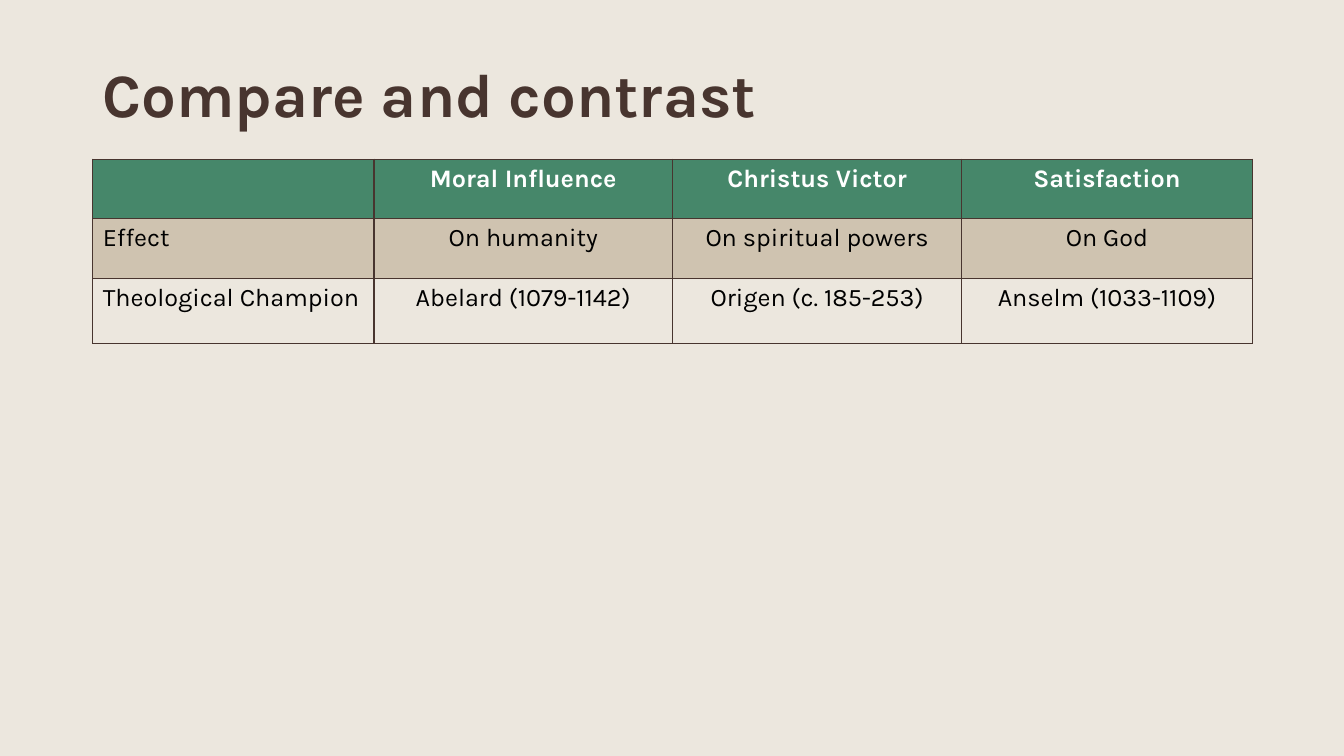
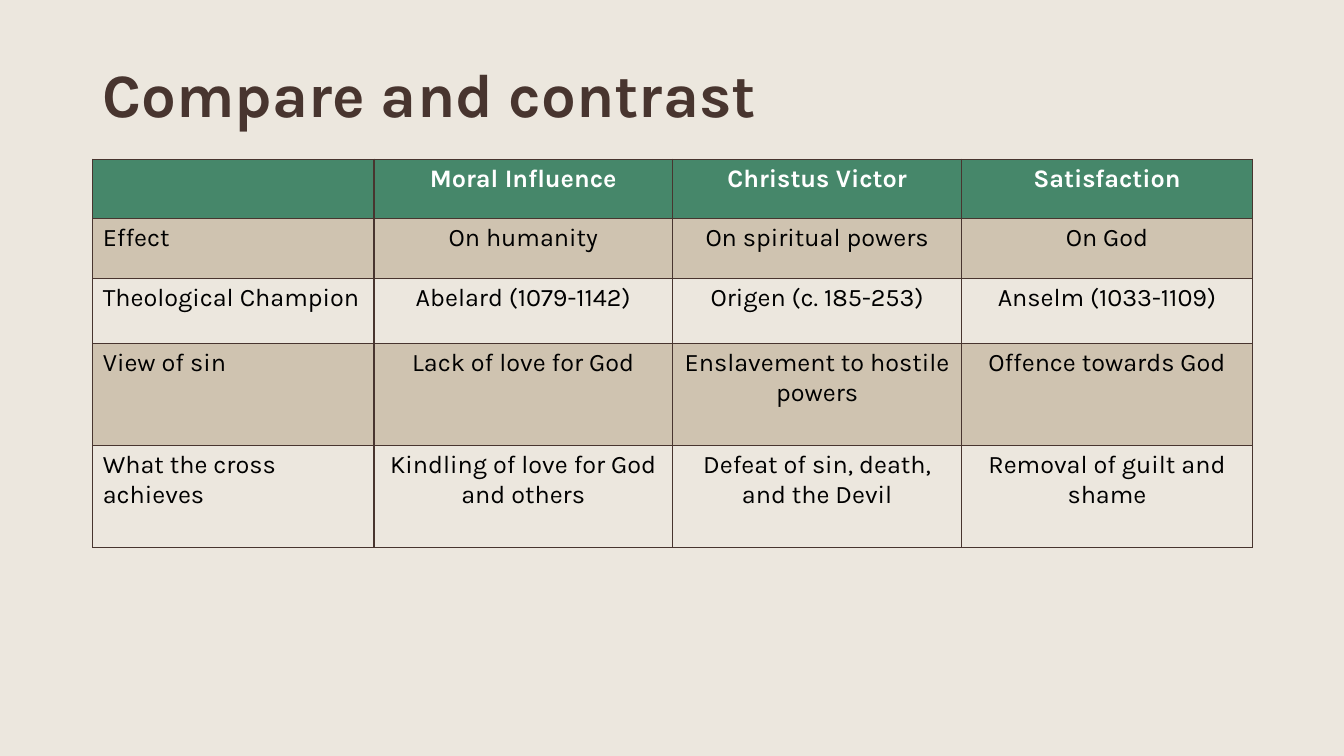
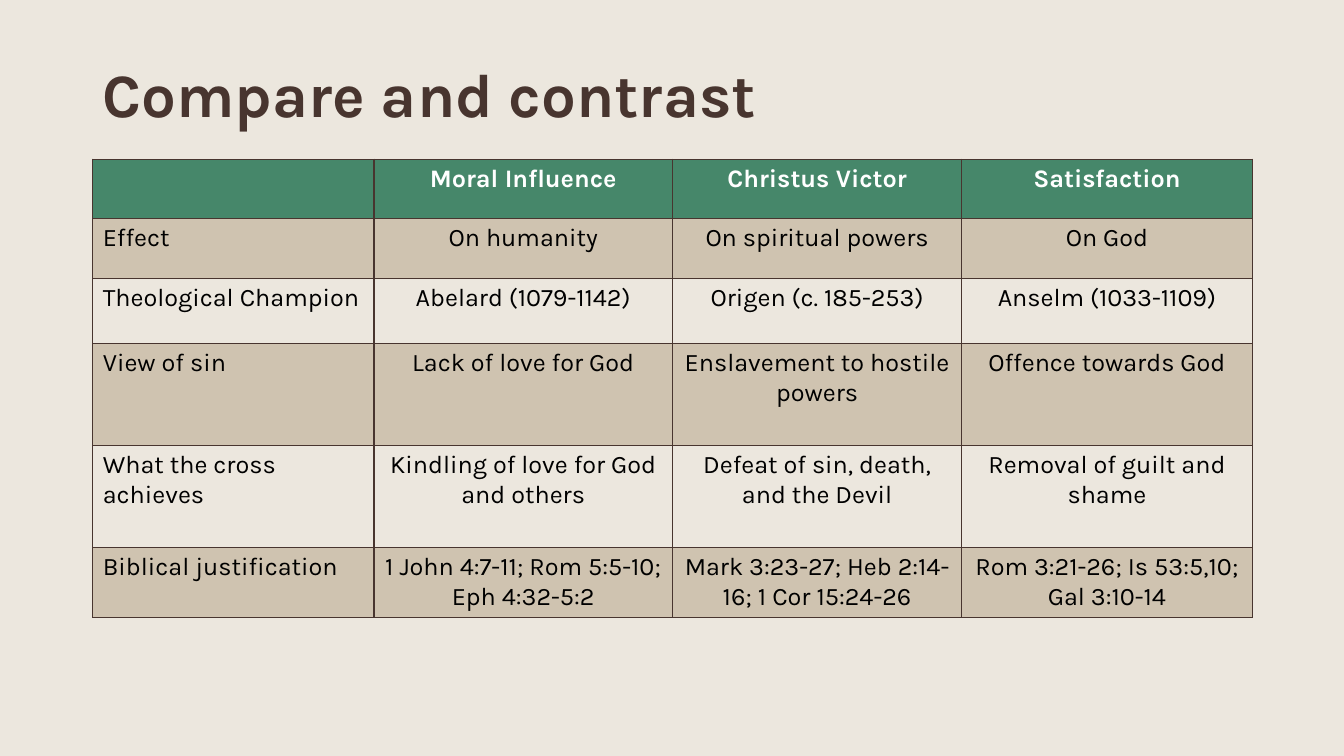
from lxml.etree import SubElement
from pptx import Presentation
from pptx.dml.color import RGBColor
from pptx.enum.text import MSO_ANCHOR as Anchor, PP_ALIGN as Align
from pptx.oxml.ns import qn
from pptx.util import Inches, Pt

COLOURS = {
    "background": "ECE7DE",
    "brown": "48352F",
    "green": "46876A",
    "tan": "CFC3B0",
    "white": "FFFFFF",
    "black": "000000",
}
FONT = "Karla"
TITLE = "Compare and contrast"
LEFT, WIDTH = 0.92, 11.5
TITLE_TOP, TABLE_TOP = 0.35, 1.58
COLUMN_WIDTHS = [2.79, 2.96, 2.87, 2.88]

ROWS = [
    (0.59, ["", "Moral Influence", "Christus Victor", "Satisfaction"]),
    (0.59, ["Effect", "On humanity", "On spiritual powers", "On God"]),
    (0.65, ["Theological Champion", "Abelard (1079-1142)",
            "Origen (c. 185-253)", "Anselm (1033-1109)"]),
    (1.01, ["View of sin", "Lack of love for God",
            "Enslavement to hostile powers", "Offence towards God"]),
    (1.01, ["What the cross achieves", "Kindling of love for God and others",
            "Defeat of sin, death, and the Devil", "Removal of guilt and shame"]),
    (0.59, ["Biblical justification", "1 John 4:7-11; Rom 5:5-10; Eph 4:32-5:2",
            "Mark 3:23-27; Heb 2:14-16; 1 Cor 15:24-26",
            "Rom 3:21-26; Is 53:5,10; Gal 3:10-14"]),
]
ROWS_SHOWN = [3, 5, 6]


def colour(name):
    return RGBColor.from_string(COLOURS[name])


def paint(fill, name):
    fill.solid()
    fill.fore_color.rgb = colour(name)


def add_run(paragraph, text, size, colour_name, bold):
    run = paragraph.add_run()
    run.text = text
    run.font.name = FONT
    run.font.size = Pt(size)
    run.font.bold = bold
    run.font.color.rgb = colour(colour_name)


def add_borders(cell):
    properties = cell._tc.get_or_add_tcPr()
    for side in ("a:lnL", "a:lnR", "a:lnT", "a:lnB"):
        line = SubElement(properties, qn(side), w=str(Pt(1)))
        solid = SubElement(line, qn("a:solidFill"))
        SubElement(solid, qn("a:srgbClr"), val=COLOURS["brown"])


def add_title(slide):
    box = slide.shapes.add_textbox(Inches(LEFT), Inches(TITLE_TOP),
                                   Inches(WIDTH), Inches(TABLE_TOP - TITLE_TOP))
    frame = box.text_frame
    frame.word_wrap = True
    frame.vertical_anchor = Anchor.MIDDLE
    paragraph = frame.paragraphs[0]
    paragraph.line_spacing = 0.9
    add_run(paragraph, TITLE, 44, "brown", True)


def fill_cell(cell, text, row_index, column_index):
    header = row_index == 0
    add_borders(cell)
    band = "tan" if row_index % 2 else "background"
    paint(cell.fill, "green" if header else band)
    paragraph = cell.text_frame.paragraphs[0]
    paragraph.alignment = Align.CENTER if column_index else Align.LEFT
    if text:
        add_run(paragraph, text, 18, "white" if header else "black", header)


def add_comparison(slide, rows):
    height = sum(row_height for row_height, _ in rows)
    table = slide.shapes.add_table(len(rows), len(COLUMN_WIDTHS), Inches(LEFT),
                                   Inches(TABLE_TOP), Inches(WIDTH),
                                   Inches(height)).table
    for column, width in zip(table.columns, COLUMN_WIDTHS):
        column.width = Inches(width)
    for row_index, (row_height, texts) in enumerate(rows):
        table.rows[row_index].height = Inches(row_height)
        for column_index, text in enumerate(texts):
            fill_cell(table.cell(row_index, column_index), text,
                      row_index, column_index)


def main():
    presentation = Presentation()
    presentation.slide_width = Inches(13.33)
    presentation.slide_height = Inches(7.5)
    paint(presentation.slide_master.background.fill, "background")
    for row_count in ROWS_SHOWN:
        slide = presentation.slides.add_slide(presentation.slide_layouts[6])
        add_title(slide)
        add_comparison(slide, ROWS[:row_count])
    presentation.save("out.pptx")


if __name__ == "__main__":
    main()
